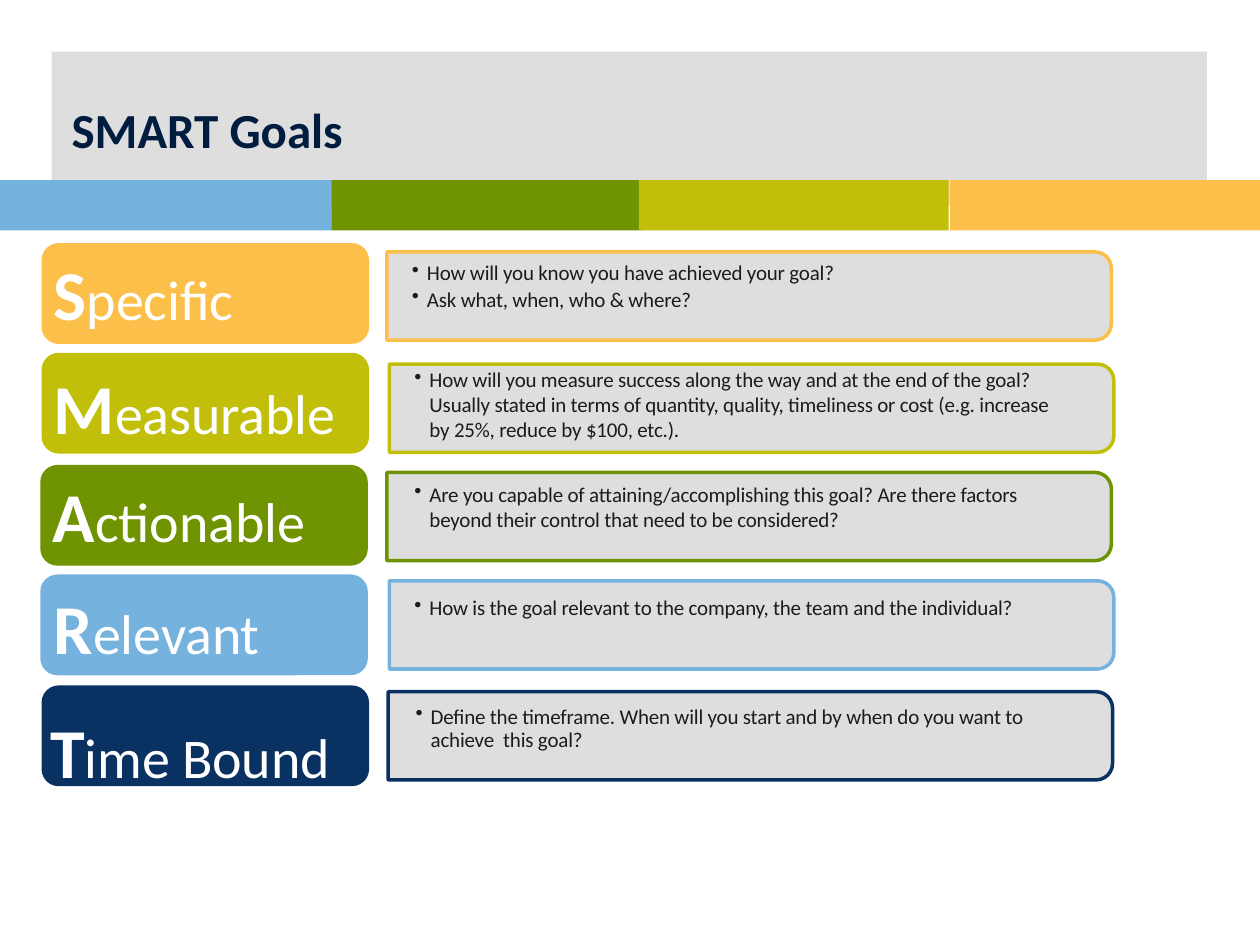
import math
from dataclasses import dataclass

import lxml.etree
import pptx
import pptx.dml.color
import pptx.enum.shapes
import pptx.enum.text
import pptx.oxml.ns
import pptx.util

Inches = pptx.util.Inches
Pt = pptx.util.Pt
SHAPE = pptx.enum.shapes.MSO_SHAPE


@dataclass(frozen=True)
class Theme:
    font: str = "Calibri"
    grey: str = "DEDEDE"
    blue: str = "75B2DD"
    green: str = "709302"
    lime: str = "C1BF0A"
    orange: str = "FCBF49"
    navy: str = "093162"
    title: str = "001C3F"
    body: str = "1C1C1C"
    white: str = "FFFFFF"
    title_size: float = 28
    initial_size: float = 40
    word_size: float = 32
    body_size: float = 12
    border: float = 2
    tracking: str = "-10"


THEME = Theme()


@dataclass(frozen=True)
class Box:
    left: float
    top: float
    width: float
    height: float

    def emu(self) -> tuple:
        return tuple(Inches(v) for v in (self.left, self.top, self.width, self.height))


@dataclass(frozen=True)
class Goal:
    word: str
    notes: tuple
    color: str
    label: Box
    panel: Box
    word_box: Box
    note_box: Box
    word_spacing: float = 1.0
    note_spacing: float | pptx.util.Length = 1.0


def label_box(left: float, top: float) -> Box:
    return Box(left, top, 2.6, 0.8)


def panel_box(left: float, top: float) -> Box:
    return Box(left, top, 5.75, 0.7)


GOALS = (
    Goal("Specific",
         ("How will you know you have achieved your goal?",
          "Ask what, when, who & where?"),
         THEME.orange, label_box(0.33, 1.93), panel_box(3.07, 2),
         Box(0.33, 1.94, 2.5, 0.77), Box(3.15, 2.01, 5.19, 0.52)),
    Goal("Measurable",
         ("How will you measure success along the way and at the end of the goal? "
          "Usually stated in terms of quantity, quality, timeliness or cost "
          "(e.g. increase by 25%, reduce by $100, etc.).",),
         THEME.lime, label_box(0.33, 2.8), panel_box(3.09, 2.89),
         Box(0.33, 2.84, 2.6, 0.77), Box(3.17, 2.86, 5.42, 0.71)),
    Goal("Actionable",
         ("Are you capable of attaining/accomplishing this goal? "
          "Are there factors beyond their control that need to be considered?",),
         THEME.green, label_box(0.32, 3.69), panel_box(3.07, 3.75),
         Box(0.32, 3.7, 2.42, 0.77), Box(3.17, 3.77, 5.42, 0.5)),
    Goal("Relevant",
         ("How is the goal relevant to the company, the team and the individual?",),
         THEME.blue, label_box(0.32, 4.56), panel_box(3.09, 4.61),
         Box(0.33, 4.59, 2.6, 0.77), Box(3.17, 4.67, 5.42, 0.3)),
    Goal("Time Bound",
         ("Define the timeframe. When will you start and by when "
          "do you want to achieve  this goal?",),
         THEME.navy, label_box(0.33, 5.44), panel_box(3.08, 5.49),
         Box(0.3, 5.29, 2.6, 0.95), Box(3.18, 5.55, 5.5, 0.47),
         1.42, Pt(13.2)),
)


def rgb(color: str) -> pptx.dml.color.RGBColor:
    return pptx.dml.color.RGBColor.from_string(color)


def paint(sp, fill: str, line: str | None = None) -> None:
    sp.shadow.inherit = False
    sp.fill.solid()
    sp.fill.fore_color.rgb = rgb(fill)
    if line:
        sp.line.color.rgb = rgb(line)
        sp.line.width = Pt(THEME.border)
    else:
        sp.line.fill.background()


def add_block(slide, kind, box: Box, fill: str):
    sp = slide.shapes.add_shape(kind, *box.emu())
    paint(sp, fill)
    return sp


def add_panel(slide, box: Box, line: str, radius: float = 0.13) -> None:
    right, bottom = box.left + box.width, box.top + box.height
    points = [(box.left, bottom), (box.left, box.top)]
    for center_y, start in ((box.top + radius, -90), (bottom - radius, 0)):
        for step in range(7):
            angle = math.radians(start + 15 * step)
            points.append((right - radius + radius * math.cos(angle),
                           center_y + radius * math.sin(angle)))
    emu = [(Inches(x), Inches(y)) for x, y in points]
    builder = slide.shapes.build_freeform(*emu[0], scale=1.0)
    builder.add_line_segments(emu[1:], close=True)
    paint(builder.convert_to_shape(), THEME.grey, line)


def add_text_frame(slide, box: Box):
    tf = slide.shapes.add_textbox(*box.emu()).text_frame
    tf.word_wrap = True
    return tf


def add_run(p, text: str, size: float, color: str, bold: bool = False,
            tracking: str = "0") -> None:
    r = p.add_run()
    r.text = text
    r.font.name = THEME.font
    r.font.size = Pt(size)
    r.font.bold = bold
    r.font.color.rgb = rgb(color)
    r.font._element.set("spc", tracking)


def add_bullet(p) -> None:
    pPr = p._p.get_or_add_pPr()
    pPr.set("marL", str(Inches(0.14)))
    pPr.set("indent", str(Inches(-0.12)))
    bullet = lxml.etree.SubElement(pPr, pptx.oxml.ns.qn("a:buChar"))
    bullet.set("char", "•")


def add_goal_text(slide, goal: Goal) -> None:
    p = add_text_frame(slide, goal.word_box).paragraphs[0]
    p.line_spacing = goal.word_spacing
    add_run(p, goal.word[0], THEME.initial_size, THEME.white, True, THEME.tracking)
    add_run(p, goal.word[1:], THEME.word_size, THEME.white, False, THEME.tracking)

    tf = add_text_frame(slide, goal.note_box)
    for i, note in enumerate(goal.notes):
        p = tf.add_paragraph() if i else tf.paragraphs[0]
        add_bullet(p)
        p.line_spacing = goal.note_spacing
        if i:
            p.space_before = Pt(0.9)
        add_run(p, note, THEME.body_size, THEME.body, tracking=THEME.tracking)


def main() -> None:
    prs = pptx.Presentation()
    prs.slide_width, prs.slide_height = Inches(10), Inches(7.5)
    slide = prs.slides.add_slide(prs.slide_layouts[6])

    add_block(slide, SHAPE.RECTANGLE, Box(0.41, 0.41, 9.17, 1.22), THEME.grey)
    stripes = ((0, 2.63, THEME.blue), (2.63, 2.46, THEME.green),
               (5.07, 2.46, THEME.lime), (7.54, 2.46, THEME.orange))
    for left, width, color in stripes:
        add_block(slide, SHAPE.RECTANGLE, Box(left, 1.43, width, 0.4), color)

    tf = add_text_frame(slide, Box(0.47, 0.45, 9.53, 1.14))
    tf.vertical_anchor = pptx.enum.text.MSO_ANCHOR.MIDDLE
    add_run(tf.paragraphs[0], "SMART Goals", THEME.title_size, THEME.title, True)

    for goal in GOALS:
        add_panel(slide, goal.panel, goal.color)
        sp = add_block(slide, SHAPE.ROUNDED_RECTANGLE, goal.label, goal.color)
        sp.adjustments[0] = 0.17
        add_goal_text(slide, goal)

    prs.save("out.pptx")


if __name__ == "__main__":
    main()
